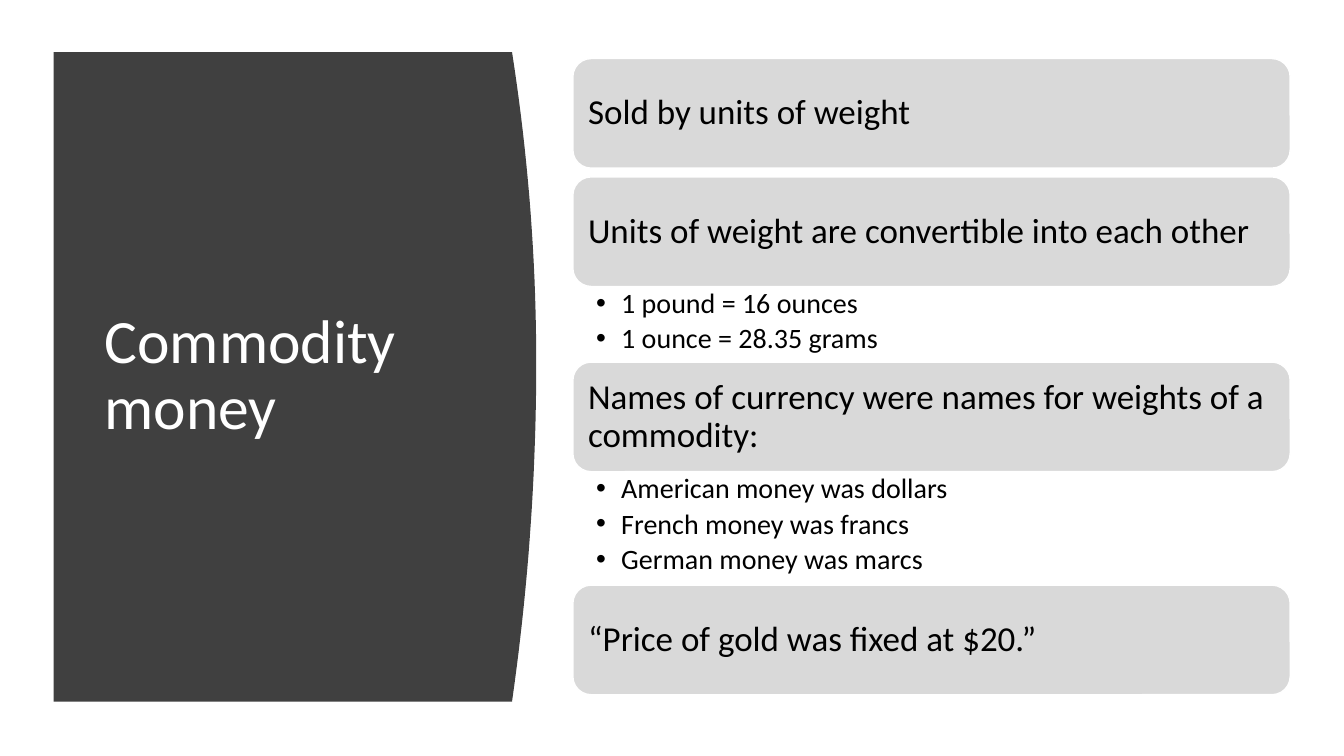
from lxml import etree
from pptx import Presentation
from pptx.dml.color import RGBColor
from pptx.enum.shapes import MSO_SHAPE
from pptx.enum.text import MSO_ANCHOR, PP_ALIGN
from pptx.oxml.ns import qn
from pptx.util import Emu, Inches, Pt

ROUNDED = MSO_SHAPE.ROUNDED_RECTANGLE
MIDDLE, TOP = MSO_ANCHOR.MIDDLE, MSO_ANCHOR.TOP
LEFT = PP_ALIGN.LEFT

CHARCOAL = RGBColor(0x40, 0x40, 0x40)
SILVER = RGBColor(0xD9, 0xD9, 0xD9)
WHITE = RGBColor(0xFF, 0xFF, 0xFF)
BLACK = RGBColor(0x00, 0x00, 0x00)

COLUMNS, ROWS = 40, 20
CARD_LEFT, CARD_WIDTH = 17.05, 21.35
CARD_HEIGHT, CARD_GAP, STACK_TOP = 2.9, 0.23, 1.55
CURVE_STEPS = 40

TOPICS = [
    ("Sold by units of weight", []),
    ("Units of weight are convertible into each other",
     ["1 pound = 16 ounces", "1 ounce = 28.35 grams"]),
    ("Names of currency were names for weights of a commodity:",
     ["American money was dollars", "French money was francs",
      "German money was marcs"]),
    ("“Price of gold was fixed at $20.”", []),
]


class TopicSlide:
    font = "Calibri"

    def __init__(self, deck):
        self.column = deck.slide_width / COLUMNS
        self.row = deck.slide_height / ROWS
        self.shapes = deck.slides.add_slide(deck.slide_layouts[6]).shapes

    def box(self, left, top, width, height):
        return (Emu(round(left * self.column)), Emu(round(top * self.row)),
                Emu(round(width * self.column)), Emu(round(height * self.row)))

    def set_lines(self, holder, lines, size, color, anchor, insets):
        frame = holder.text_frame
        frame.word_wrap = True
        frame.vertical_anchor = anchor
        (frame.margin_left, frame.margin_top,
         frame.margin_right, frame.margin_bottom) = map(Inches, insets)
        frame.text = "\n".join(lines)
        for paragraph in frame.paragraphs:
            paragraph.alignment = LEFT
            paragraph.line_spacing = 0.9
            font = paragraph.runs[0].font
            font.name, font.size = self.font, Pt(size)
            font.color.rgb = color
        return frame.paragraphs

    def curved_panel(self, left, top, edge, bottom, bulge, peak):
        points = []
        for step in range(CURVE_STEPS + 1):
            y = top + (bottom - top) * step / CURVE_STEPS
            reach = peak - top if y < peak else bottom - peak
            x = edge + bulge * (1 - ((y - peak) / reach) ** 2)
            points.append((x * self.column, y * self.row))
        points.append((left * self.column, bottom * self.row))
        outline = self.shapes.build_freeform(
            round(left * self.column), round(top * self.row))
        outline.add_line_segments([(round(x), round(y)) for x, y in points])
        panel = outline.convert_to_shape()
        panel.shadow.inherit = False
        panel.fill.solid()
        panel.fill.fore_color.rgb = CHARCOAL
        panel.line.fill.background()

    def title(self, wording, *area):
        heading = self.shapes.add_textbox(*self.box(*area))
        self.set_lines(heading, [wording], 44, WHITE, MIDDLE,
                       (0.1, 0.05, 0.1, 0.05))

    def card(self, wording, top):
        card = self.shapes.add_shape(
            ROUNDED, *self.box(CARD_LEFT, top, CARD_WIDTH, CARD_HEIGHT))
        card.shadow.inherit = False
        card.fill.solid()
        card.fill.fore_color.rgb = SILVER
        card.line.color.rgb = WHITE
        card.line.width = Pt(1)
        self.set_lines(card, [wording], 25, BLACK, MIDDLE,
                       (0.1, 0.1, 0.1, 0.1))

    def bullets(self, lines, top):
        details = self.shapes.add_textbox(
            *self.box(CARD_LEFT, top, CARD_WIDTH, len(lines)))
        for paragraph in self.set_lines(details, lines, 20, BLACK, TOP,
                                        (0.23, 0.03, 0.19, 0.03)):
            paragraph.level = 1
            paragraph.space_after = Pt(3.5)
            properties = paragraph._p.get_or_add_pPr()
            properties.set("marL", str(Inches(0.25)))
            properties.set("indent", str(-Inches(0.25)))
            etree.SubElement(properties, qn("a:buFont"), typeface="Arial")
            etree.SubElement(properties, qn("a:buChar"), char="•")

    def stack(self, topics):
        top = STACK_TOP
        for heading, details in topics:
            self.card(heading, top)
            top += CARD_HEIGHT
            if details:
                self.bullets(details, top)
            top += len(details) or CARD_GAP


def main():
    deck = Presentation()
    deck.slide_width, deck.slide_height = Inches(13.33), Inches(7.5)
    slide = TopicSlide(deck)
    slide.curved_panel(left=1.6, top=1.38, edge=15.24, bottom=18.56,
                       bulge=0.72, peak=9.6)
    slide.title("Commodity money", 2.82, 2.96, 11.22, 14)
    slide.stack(TOPICS)
    deck.save("out.pptx")


if __name__ == "__main__":
    main()
